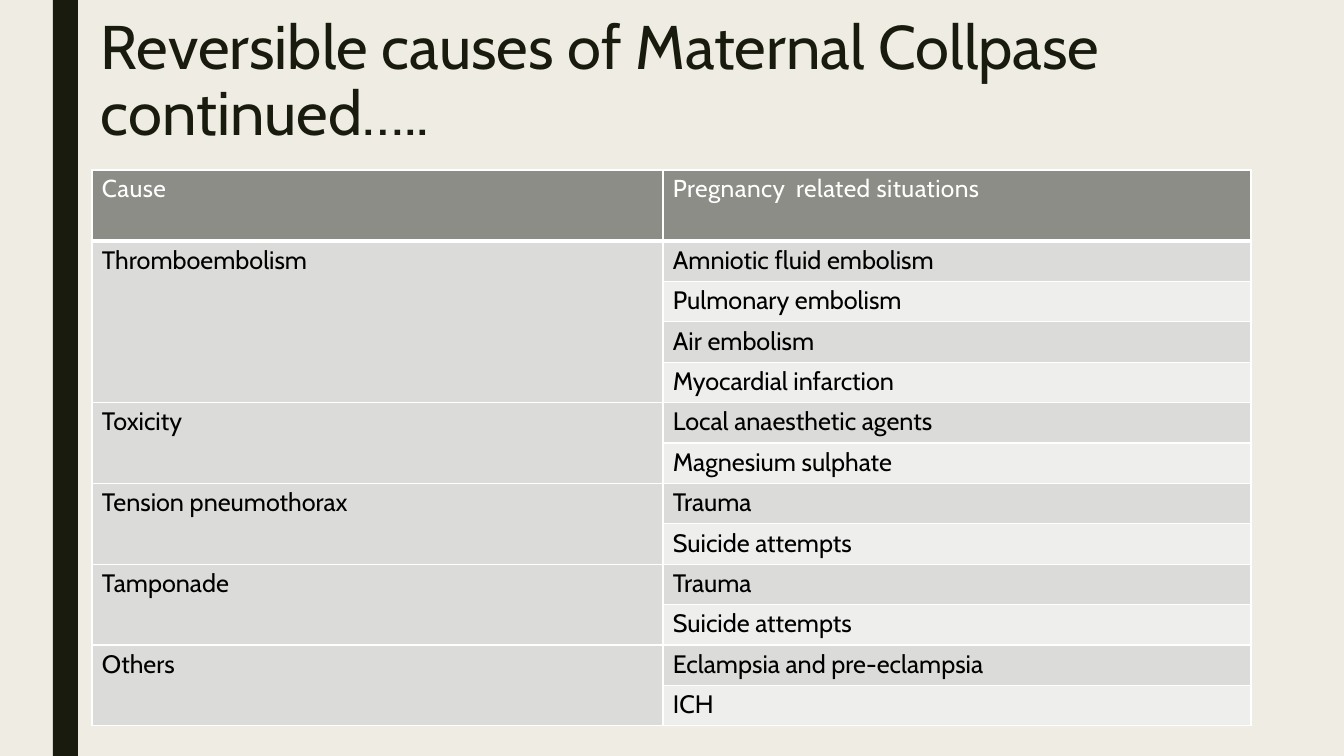
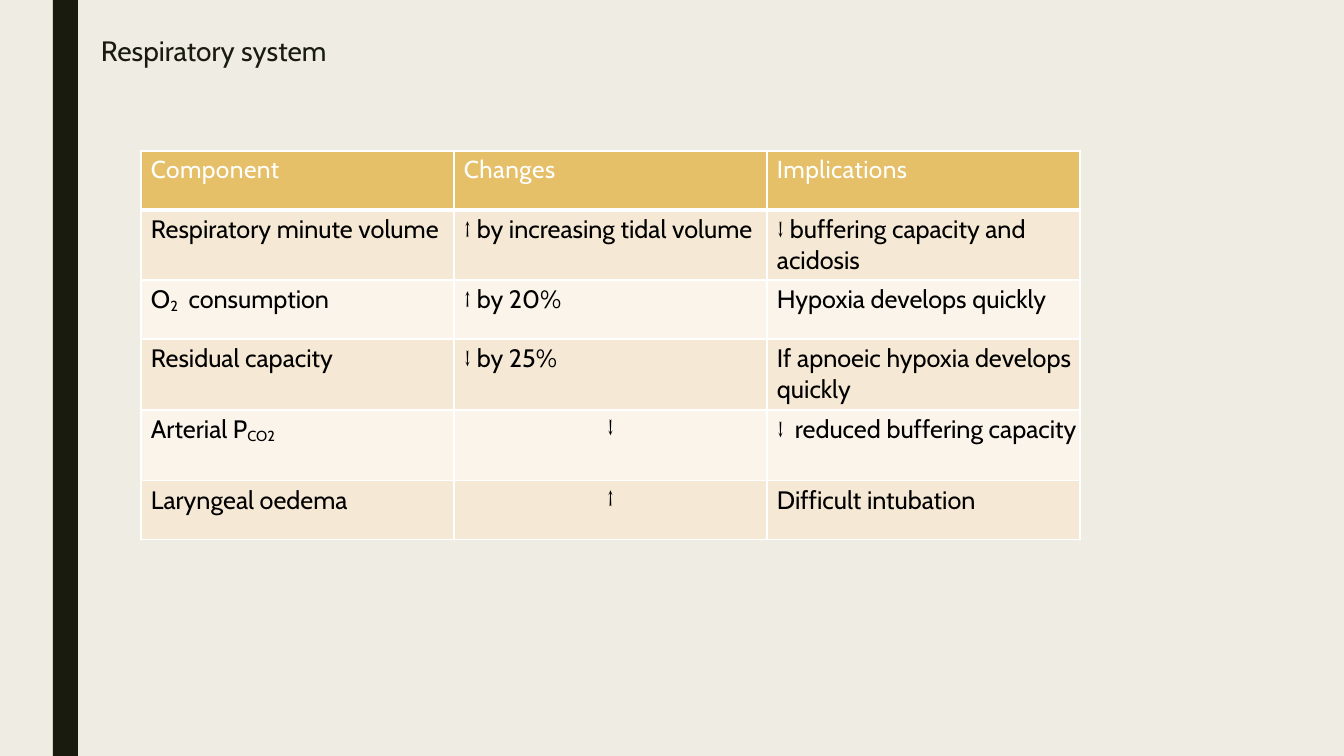
from lxml import etree
from pptx import Presentation
from pptx.dml.color import RGBColor
from pptx.enum.shapes import MSO_SHAPE
from pptx.enum.text import PP_ALIGN
from pptx.oxml.ns import qn
from pptx.util import Pt

RECT = MSO_SHAPE.RECTANGLE
LEFT, CENTER = PP_ALIGN.LEFT, PP_ALIGN.CENTER
PX = 914400 / 100.8
CREAM = RGBColor(0xEF, 0xED, 0xE3)
INK = RGBColor(0x19, 0x1B, 0x0E)
WHITE = RGBColor(0xFF, 0xFF, 0xFF)
BLACK = RGBColor(0, 0, 0)
GRAY = RGBColor(0x8C, 0x8D, 0x86)
SILVER = RGBColor(0xDB, 0xDB, 0xD9)
PALE = RGBColor(0xEE, 0xEE, 0xED)
GOLD = RGBColor(0xE6, 0xC0, 0x69)
SAND = RGBColor(0xF5, 0xE8, 0xD4)
IVORY = RGBColor(0xFA, 0xF4, 0xEB)


def write(para, text, size, color, gap=0):
    # "|" parts runs, "_" lowers a run, "~" widens a space
    for part in text.split("|"):
        run = para.add_run()
        run.text = part.strip("_~")
        run.font.size = Pt(size)
        run.font.bold = False
        run.font.color.rgb = color
        run.font.name = "Cambria" if part[0] in "↑↓" else "Cabin"
        props = run.font._element
        if part[0] == "_":
            props.set("baseline", "-14000")
        space = 350 if part[0] == "~" else gap
        if space:
            props.set("spc", str(space))


def style(cell, row, text, fill):
    props = cell._tc.get_or_add_tcPr()
    for side in "LRTB":
        thick = (row, side) in ((0, "B"), (1, "T"))
        line = etree.SubElement(props, qn(f"a:ln{side}"), w=str(Pt(3 if thick else 1)))
        solid = etree.SubElement(line, qn("a:solidFill"))
        etree.SubElement(solid, qn("a:srgbClr"), val=str(WHITE))
    cell.fill.solid()
    cell.fill.fore_color.rgb = fill
    cell.margin_left = round(10 * PX)
    cell.margin_top = round(4 * PX)
    cell.margin_right = cell.margin_bottom = 0
    if not text:
        return
    para = cell.text_frame.paragraphs[0]
    para.space_before = Pt(2.6 if row else 3)
    if text in ("↑", "↓"):
        para.alignment = CENTER
        cell.margin_left = 0
    if row:
        write(para, text, 18, BLACK)
    else:
        write(para, text, 17.5, WHITE, 30)


GROUPS = [
    ("Thromboembolism", ["Amniotic fluid embolism", "Pulmonary embolism",
                         "Air embolism", "Myocardial infarction"]),
    ("Toxicity", ["Local anaesthetic agents", "Magnesium sulphate"]),
    ("Tension pneumothorax", ["Trauma", "Suicide attempts"]),
    ("Tamponade", ["Trauma", "Suicide attempts"]),
    ("Others", ["Eclampsia and pre-eclampsia", "ICH"]),
]
causes = [("Cause", "Pregnancy|~ |related situations")]
spans = []
for cause, events in GROUPS:
    spans.append((len(causes), len(events)))
    for event in events:
        causes.append((cause if event == events[0] else "", event))

CHANGES = [
    ("Component", "Changes", "Implications"),
    ("Respiratory minute volume", "↑ |by increasing tidal volume",
     "↓ |buffering capacity and acidosis"),
    ("O|_2|~ |consumption", "↑ |by 20%", "Hypoxia develops quickly"),
    ("Residual capacity", "↓ |by 25%", "If apnoeic hypoxia develops quickly"),
    ("Arterial P|_CO2", "↓", "↓|~ |reduced buffering capacity"),
    ("Laryngeal oedema", "↑", "Difficult intubation"),
]

PAGES = [
    dict(title="Reversible causes of Maternal Collpase continued…..", size=44,
         top=10, before=7.4, lead=47, at=(92, 170), cols=[571, 588],
         rows=[71] + [485 / 12] * 12, cells=causes, spans=spans,
         fills=(GRAY, SILVER, PALE)),
    dict(title="Respiratory system", size=20, top=28, before=1, lead=None,
         at=(141, 151), cols=[313] * 3, rows=[59, 70, 59, 71, 71, 59],
         cells=CHANGES, spans=[], fills=(GOLD, SAND, IVORY)),
]

deck = Presentation()
deck.slide_width = round(1344 * PX)
deck.slide_height = round(756 * PX)
back = deck.slide_master.background.fill
back.solid()
back.fore_color.rgb = CREAM

for page in PAGES:
    slide = deck.slides.add_slide(deck.slide_layouts[6])
    band = slide.shapes.add_shape(RECT, round(53 * PX), 0, round(25 * PX), deck.slide_height)
    band.shadow.inherit = False
    band.fill.solid()
    band.fill.fore_color.rgb = INK
    band.line.fill.background()

    box = slide.shapes.add_textbox(*[round(n * PX) for n in (101, 6, 1082, 142)])
    frame = box.text_frame
    frame.word_wrap = True
    frame.margin_left = frame.margin_right = frame.margin_bottom = 0
    frame.margin_top = round(page["top"] * PX)
    para = frame.paragraphs[0]
    para.alignment = LEFT
    para.space_before = Pt(page["before"])
    if page["lead"]:
        para.line_spacing = Pt(page["lead"])
    write(para, page["title"], page["size"], INK)

    cols, rows = page["cols"], page["rows"]
    place = [round(n * PX) for n in (*page["at"], sum(cols), sum(rows))]
    table = slide.shapes.add_table(len(rows), len(cols), *place).table
    table.horz_banding = False
    for col, width in zip(table.columns, cols):
        col.width = round(width * PX)
    for row, height in zip(table.rows, rows):
        row.height = round(height * PX)
    head, odd, even = page["fills"]
    for r, texts in enumerate(page["cells"]):
        for c, text in enumerate(texts):
            plain = odd if r % 2 or (page["spans"] and c == 0) else even
            style(table.cell(r, c), r, text, plain if r else head)
    for start, count in page["spans"]:
        table.cell(start, 0).merge(table.cell(start + count - 1, 0))

deck.save("out.pptx")
